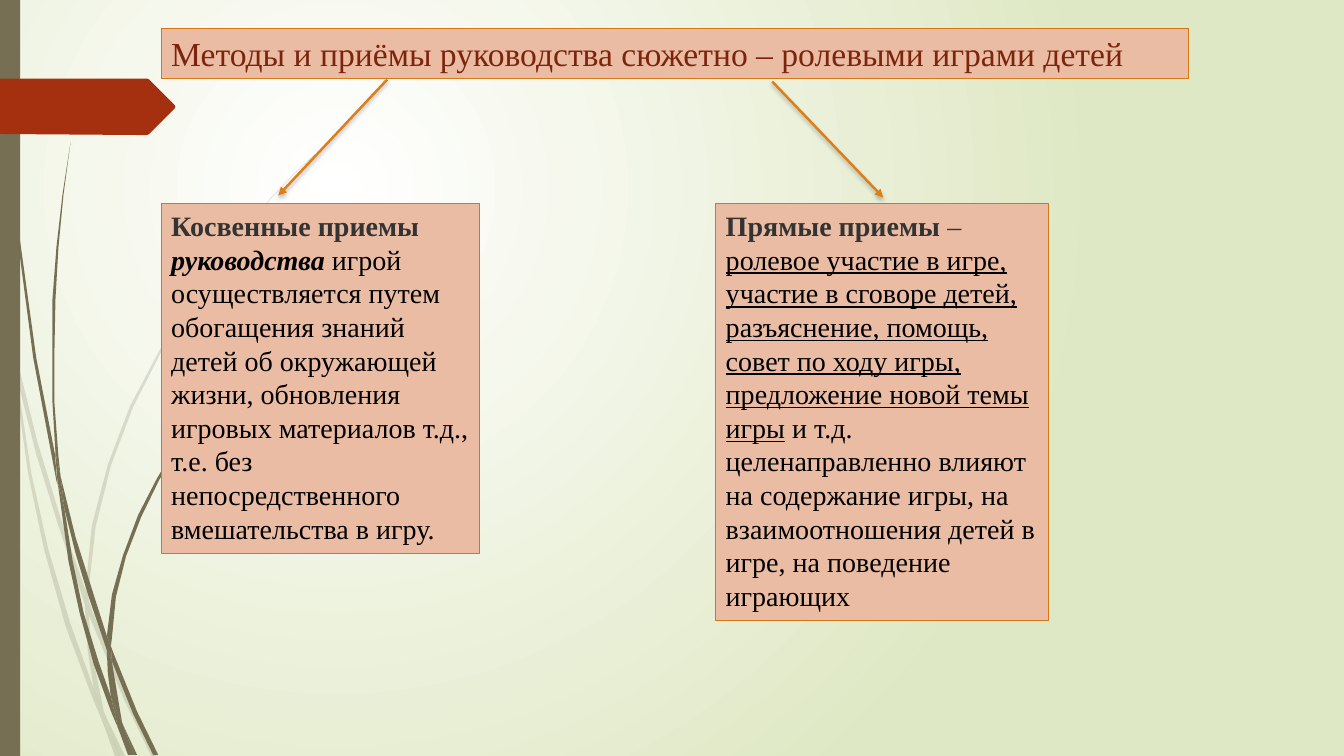
import pptx
import pptx.util
import pptx.dml.color
import pptx.enum.shapes
import pptx.enum.text
import pptx.oxml
import pptx.oxml.ns
import lxml.etree

PX = 9144
WIDTH, HEIGHT = 1333, 750
OLIVE, RUST, PEACH, ORANGE = "766F54", "A53010", "EBBCA4", "D47817"
qn = pptx.oxml.ns.qn


def color(code):
    return pptx.dml.color.RGBColor.from_string(code)


def draw_outline(points, code):
    builder = page.shapes.build_freeform(*points[0], scale=PX)
    builder.add_line_segments(points[1:], close=True)
    outline = builder.convert_to_shape()
    outline.shadow.inherit = False
    outline.fill.solid()
    outline.fill.fore_color.rgb = color(code)
    outline.line.fill.background()
    return outline


deck = pptx.Presentation()
deck.slide_width = WIDTH * PX
deck.slide_height = HEIGHT * PX
page = deck.slides.add_slide(deck.slide_layouts[6])

backdrop = page.background.fill
backdrop.gradient()
for stop, position, code in zip(backdrop.gradient_stops, (0, 1), ("FFFFFF", "DFE8C4")):
    stop.position = position
    stop.color.rgb = color(code)
linear = page.element.find(".//" + qn("a:lin"))
radial = lxml.etree.Element(qn("a:path"), path="circle")
lxml.etree.SubElement(radial, qn("a:fillToRect"), l="50000", t="50000", r="100000", b="100000")
linear.getparent().replace(linear, radial)

pale_blades = [
    [(11, 350), (9, 322), (0, 282), (0, 299), (10, 344)],
    [(58, 522), (84, 599), (85, 586), (62, 520), (37, 438), (14, 345), (17, 376), (36, 451)],
    [(92, 607), (88, 596), (88, 610), (123, 694), (150, 750), (155, 750), (127, 692)],
    [(119, 750), (124, 750), (105, 711)],
    [(93, 683), (70, 619), (48, 545), (31, 469), (17, 376), (11, 350), (28, 470),
     (44, 546), (65, 621), (92, 693), (101, 714), (99, 707)],
    [(84, 599), (87, 646), (93, 683), (96, 692), (105, 711), (103, 706), (91, 646),
     (88, 610), (88, 608)],
    [(88, 584), (95, 522), (110, 462), (132, 404), (160, 349), (192, 296), (229, 245),
     (268, 198), (290, 175), (312, 154), (312, 153), (289, 175), (268, 197), (228, 244),
     (190, 295), (158, 348), (129, 403), (107, 461), (91, 522), (85, 584), (85, 586), (88, 596)],
    [(101, 714), (114, 750), (119, 750)],
    [(88, 608), (88, 610), (88, 596), (85, 586), (84, 599)],
    [(96, 692), (93, 683), (99, 707), (101, 714), (119, 750), (105, 711)],
]
dark_blades = [
    [(7, 110), (17, 233), (33, 355), (56, 477), (57, 481), (55, 457), (55, 453),
     (36, 355), (19, 232), (8, 109), (5, 48), (4, 0), (3, 0), (4, 48)],
    [(88, 592), (106, 645), (106, 633), (106, 631), (93, 590), (75, 533), (60, 472),
     (64, 505), (75, 549)],
    [(113, 649), (110, 641), (111, 656), (132, 708), (152, 749), (157, 749), (136, 706)],
    [(110, 691), (98, 657), (83, 608), (72, 556), (64, 505), (57, 477), (68, 557),
     (79, 608), (93, 659), (111, 708), (117, 722), (116, 717)],
    [(60, 472), (58, 453), (54, 400), (54, 349), (55, 297), (58, 245), (63, 193),
     (70, 141), (62, 193), (56, 245), (52, 297), (52, 349), (52, 399), (55, 449)],
    [(133, 749), (136, 749), (122, 719)],
    [(57, 477), (64, 505), (60, 472), (55, 449), (55, 453)],
    [(111, 633), (115, 592), (125, 552), (140, 513), (158, 476), (180, 440), (205, 406),
     (231, 374), (245, 359), (261, 344), (260, 344), (245, 358), (231, 373), (204, 405),
     (178, 438), (156, 474), (137, 511), (122, 551), (111, 590), (106, 631), (110, 641)],
    [(117, 722), (127, 749), (131, 749)],
    [(106, 645), (107, 668), (110, 691), (116, 706), (122, 719), (121, 716), (111, 656),
     (109, 651)],
    [(106, 645), (109, 651), (111, 656), (110, 641), (106, 631), (106, 633)],
    [(116, 706), (110, 691), (116, 717), (117, 722), (130, 749), (133, 749), (122, 719)],
]
for blades, opacity in ((pale_blades, 20), (dark_blades, 100)):
    grass = [draw_outline(blade, OLIVE) for blade in blades]
    if opacity < 100:
        for blade in grass:
            tint = blade.element.spPr.find(".//" + qn("a:srgbClr"))
            lxml.etree.SubElement(tint, qn("a:alpha"), val=str(opacity * 1000))
    page.shapes.add_group_shape(grass)

side_bar = page.shapes.add_shape(
    pptx.enum.shapes.MSO_SHAPE.RECTANGLE, 0, 0, 20 * PX, HEIGHT * PX)
side_bar.shadow.inherit = False
side_bar.fill.solid()
side_bar.fill.fore_color.rgb = color(OLIVE)
side_bar.line.fill.background()

draw_outline([(173, 108), (148, 133), (146, 134), (136, 134), (0, 133), (0, 78),
              (146, 78), (148, 79), (173, 104), (174, 106)], RUST)

panels = [
    ((160, 28, 1019, 50), 24, [
        ("Методы и приёмы руководства сюжетно – ролевыми играми детей", "7C240C", {}),
    ]),
    ((160, 202, 316, 347), 20, [
        ("Косвенные приемы ", "333333", {"bold": True}),
        (" руководства", "000000", {"bold": True, "italic": True}),
        (" игрой осуществляется путем обогащения знаний детей об окружающей жизни, "
         "обновления игровых материалов т.д., т.е. без непосредственного "
         "вмешательства в игру.", "000000", {}),
    ]),
    ((710, 202, 330, 414), 20, [
        ("Прямые приемы", "333333", {"bold": True}),
        (" – ", "333333", {}),
        ("ролевое участие в игре, участие в сговоре детей, разъяснение, помощь, "
         "совет по ходу игры, предложение новой темы игры", "000000", {"underline": True}),
        (" и т.д. целенаправленно влияют на содержание игры, на взаимоотношения "
         "детей в игре, на поведение играющих", "000000", {}),
    ]),
]
for place, size, spans in panels:
    box = page.shapes.add_textbox(*(length * PX for length in place))
    box.fill.solid()
    box.fill.fore_color.rgb = color(PEACH)
    box.line.color.rgb = color(ORANGE)
    box.line.width = pptx.util.Pt(0.75)
    box.text_frame.word_wrap = True
    box.text_frame.auto_size = pptx.enum.text.MSO_AUTO_SIZE.SHAPE_TO_FIT_TEXT
    para = box.text_frame.paragraphs[0]
    for words, code, style in spans:
        span = para.add_run()
        span.text = words
        span.font.color.rgb = color(code)
        look = {"name": "Times New Roman", "size": pptx.util.Pt(size), **style}
        for key, value in look.items():
            setattr(span.font, key, value)

for ends in ((384, 79, 276, 194), (766, 81, 876, 196)):
    arrow = page.shapes.add_connector(
        pptx.enum.shapes.MSO_CONNECTOR.STRAIGHT, *(length * PX for length in ends))
    arrow.line.color.rgb = color("DE7E18")
    arrow.line.width = pptx.util.Pt(1.75)
    lxml.etree.SubElement(arrow.line._get_or_add_ln(), qn("a:tailEnd"), type="triangle")
    effects = lxml.etree.SubElement(arrow._element.spPr, qn("a:effectLst"))
    shadow = lxml.etree.SubElement(
        effects, qn("a:outerShdw"), blurRad="38100", dist="25400", dir="5400000", rotWithShape="0")
    shade = lxml.etree.SubElement(shadow, qn("a:srgbClr"), val="000000")
    lxml.etree.SubElement(shade, qn("a:alpha"), val="25000")

deck.save("out.pptx")
